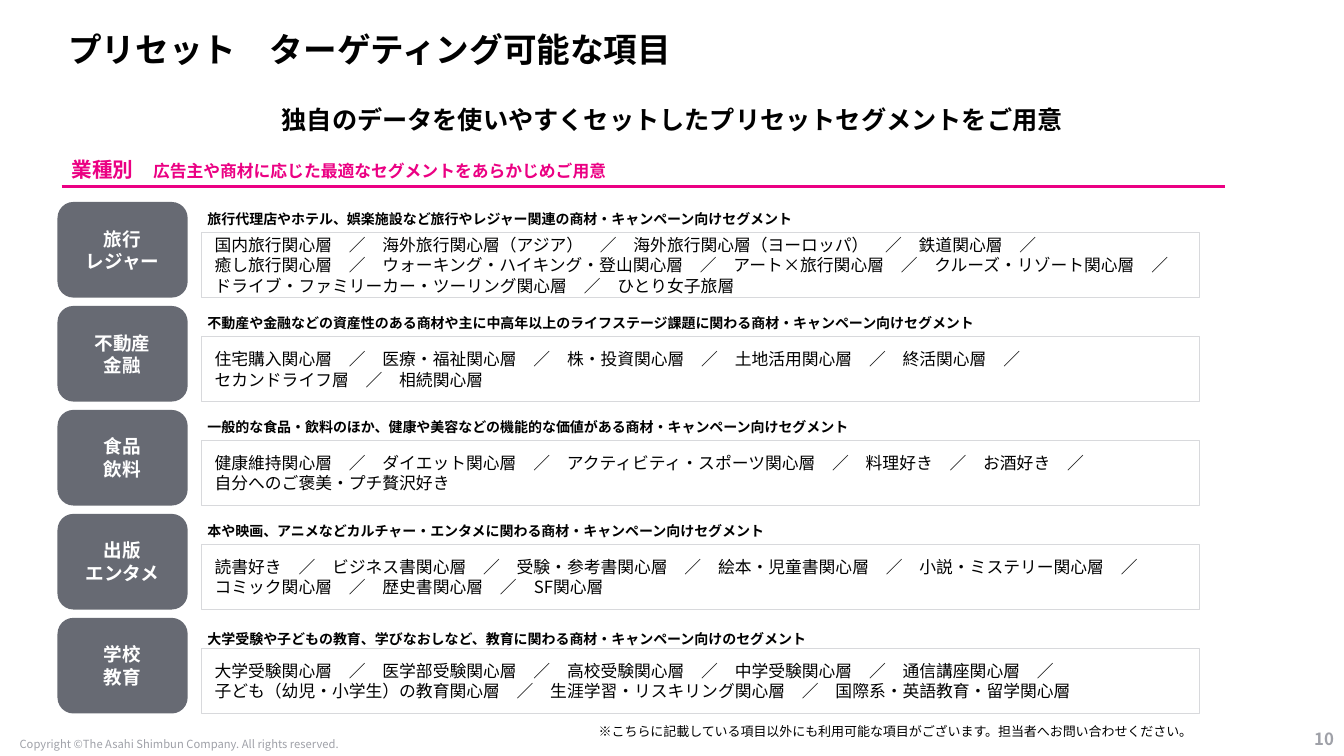
from lxml import etree
from pptx import Presentation
from pptx import util as u
from pptx.dml.color import RGBColor
from pptx.enum import shapes, text
from pptx.oxml import ns

FONT = "Noto Sans CJK JP"
BLACK, WHITE, PINK = "000000", "FFFFFF", "EB0083"
SLATE, BORDER, MUTED = "676A73", "D8D9DC", "9FA1A8"
INSET = 0.33
SEPARATOR = "　／"

SEGMENTS = [
    ("旅行\nレジャー", "旅行代理店やホテル、娯楽施設など旅行やレジャー関連の商材・キャンペーン向けセグメント", [
        ["国内旅行関心層", "海外旅行関心層（アジア）", "海外旅行関心層（ヨーロッパ）", "鉄道関心層"],
        ["癒し旅行関心層", "ウォーキング・ハイキング・登山関心層", "アート×旅行関心層", "クルーズ・リゾート関心層"],
        ["ドライブ・ファミリーカー・ツーリング関心層", "ひとり女子旅層"]]),
    ("不動産\n金融", "不動産や金融などの資産性のある商材や主に中高年以上のライフステージ課題に関わる商材・キャンペーン向けセグメント", [
        ["住宅購入関心層", "医療・福祉関心層", "株・投資関心層", "土地活用関心層", "終活関心層"],
        ["セカンドライフ層", "相続関心層"]]),
    ("食品\n飲料", "一般的な食品・飲料のほか、健康や美容などの機能的な価値がある商材・キャンペーン向けセグメント", [
        ["健康維持関心層", "ダイエット関心層", "アクティビティ・スポーツ関心層", "料理好き", "お酒好き"],
        ["自分へのご褒美・プチ贅沢好き"]]),
    ("出版\nエンタメ", "本や映画、アニメなどカルチャー・エンタメに関わる商材・キャンペーン向けセグメント", [
        ["読書好き", "ビジネス書関心層", "受験・参考書関心層", "絵本・児童書関心層", "小説・ミステリー関心層"],
        ["コミック関心層", "歴史書関心層", "SF関心層"]]),
    ("学校\n教育", "大学受験や子どもの教育、学びなおしなど、教育に関わる商材・キャンペーン向けのセグメント", [
        ["大学受験関心層", "医学部受験関心層", "高校受験関心層", "中学受験関心層", "通信講座関心層"],
        ["子ども（幼児・小学生）の教育関心層", "生涯学習・リスキリング関心層", "国際系・英語教育・留学関心層"]]),
]


def color(hex_string):
    return RGBColor.from_string(hex_string)


def cm_box(*lengths):
    return [u.Cm(length) for length in lengths]


def format_run(run, size, hex_string, bold=False):
    run.font.size = u.Pt(size)
    run.font.bold = bold
    run.font.name = FONT
    run.font.color.rgb = color(hex_string)
    east_asian = etree.SubElement(run.font._element, ns.qn("a:ea"))
    east_asian.set("typeface", FONT)


def write(shape, content, size, hex_string, bold=False, align=text.PP_ALIGN.LEFT,
          anchor=text.MSO_ANCHOR.TOP, inset=None):
    frame = shape.text_frame
    frame.text = content
    frame.word_wrap = True
    frame.auto_size = text.MSO_AUTO_SIZE.NONE
    frame.vertical_anchor = anchor
    if inset is not None:
        frame.margin_left = frame.margin_right = u.Cm(inset)
        frame.margin_top = frame.margin_bottom = u.Cm(inset)
    for paragraph in frame.paragraphs:
        paragraph.alignment = align
        for run in paragraph.runs:
            format_run(run, size, hex_string, bold)
    return frame


def add_text(slide, box, content, size, hex_string, **options):
    return write(slide.shapes.add_textbox(*cm_box(*box)), content, size, hex_string, **options)


def add_panel(slide, kind, box, fill, line=None):
    shape = slide.shapes.add_shape(kind, *cm_box(*box))
    shape.shadow.inherit = False
    shape.fill.solid()
    shape.fill.fore_color.rgb = color(fill)
    if line:
        shape.line.color.rgb = color(line)
        shape.line.width = u.Pt(0.75)
    else:
        shape.line.fill.background()
    return shape


def place(shape, box):
    shape.left, shape.top, shape.width, shape.height = cm_box(*box)


def fill_placeholders(slide, title_box, lead_box):
    title, lead = slide.shapes.title, slide.placeholders[1]
    place(title, title_box)
    frame = write(title, "プリセット　ターゲティング可能な項目", 24, BLACK, bold=True,
                  anchor=text.MSO_ANCHOR.MIDDLE)
    frame.paragraphs[0].line_spacing = 0.9
    place(lead, lead_box)
    frame = write(lead, "独自のデータを使いやすくセットしたプリセットセグメントをご用意", 18, BLACK,
                  bold=True, align=text.PP_ALIGN.CENTER)
    paragraph = frame.paragraphs[0]
    paragraph.line_spacing = 0.85
    paragraph.space_before = u.Pt(0)
    properties = paragraph._p.get_or_add_pPr()
    properties.set("marL", "0")
    properties.set("indent", "0")
    etree.SubElement(properties, ns.qn("a:buNone"))


def add_section_heading(slide, left, top, width, height):
    frame = add_text(slide, (left, top, 24.51, height), "業種別", 14.7, PINK, bold=True, inset=INSET)
    for content, size in (("　", 14), ("広告主や商材に応じた最適なセグメントをあらかじめご用意", 12)):
        run = frame.paragraphs[0].add_run()
        run.text = content
        format_run(run, size, PINK, True)
    rule_left, rule_top = left + 0.08, top + 1.07
    rule = slide.shapes.add_connector(
        shapes.MSO_CONNECTOR.STRAIGHT, *cm_box(rule_left, rule_top, left + width, rule_top))
    rule.line.color.rgb = color(PINK)
    rule.line.width = u.Pt(1.5)
    etree.SubElement(rule._element.spPr, ns.qn("a:effectLst"))


def add_segment_row(slide, left, top, width, height, segment, caption_shift):
    name, caption, lines = segment
    badge = add_panel(slide, shapes.MSO_SHAPE.ROUNDED_RECTANGLE, (left, top, 3.28, height), SLATE)
    write(badge, name, 13.3, WHITE, bold=True, align=text.PP_ALIGN.CENTER,
          anchor=text.MSO_ANCHOR.MIDDLE, inset=INSET)
    list_left, list_drop = left + 3.63, 0.78
    panel = add_panel(slide, shapes.MSO_SHAPE.RECTANGLE,
                      (list_left, top + list_drop, left + width - list_left, height - list_drop),
                      WHITE, BORDER)
    items = (SEPARATOR + "\n").join((SEPARATOR + "　").join(line) for line in lines)
    write(panel, items, 12, BLACK, anchor=text.MSO_ANCHOR.MIDDLE, inset=INSET)
    add_text(slide, (left + 3.45, top + caption_shift, 20.65, 1.12), caption, 10, BLACK,
             bold=True, inset=INSET)


def add_segment_rows(slide, left, top, width, pitch, height):
    for index, segment in enumerate(SEGMENTS):
        caption_shift = 0 if segment is SEGMENTS[-1] else -0.11
        add_segment_row(slide, left, top + index * pitch, width, height, segment, caption_shift)


def add_footer(slide, width, height):
    add_text(slide, (14.76, height - 1.14, 18.19, 1.09),
             "※こちらに記載している項目以外にも利用可能な項目がございます。担当者へお問い合わせください。",
             9.3, BLACK, inset=INSET)
    add_text(slide, (0.23, height - 0.51, 8.59, 0.43),
             "Copyright ©The Asahi Shimbun Company. All rights reserved.", 8, MUTED,
             align=text.PP_ALIGN.CENTER, anchor=text.MSO_ANCHOR.MIDDLE)
    add_text(slide, (width - 1.98, height - 0.84, 1.98, 0.84), "10", 12, MUTED, bold=True,
             align=text.PP_ALIGN.RIGHT, anchor=text.MSO_ANCHOR.MIDDLE)


def main():
    width, height = 33.87, 19.05
    presentation = Presentation()
    presentation.slide_width, presentation.slide_height = cm_box(width, height)
    slide = presentation.slides.add_slide(presentation.slide_layouts[1])
    fill_placeholders(slide, (1.47, 0.71, 25.3, 1.19), (0.94, 2.62, 32, 2.31))
    add_section_heading(slide, 1.47, 3.63, 29.39, 0.94)
    add_segment_rows(slide, 1.45, 5.09, 28.78, 2.62, 2.41)
    add_footer(slide, width, height)
    presentation.save("out.pptx")


if __name__ == "__main__":
    main()
